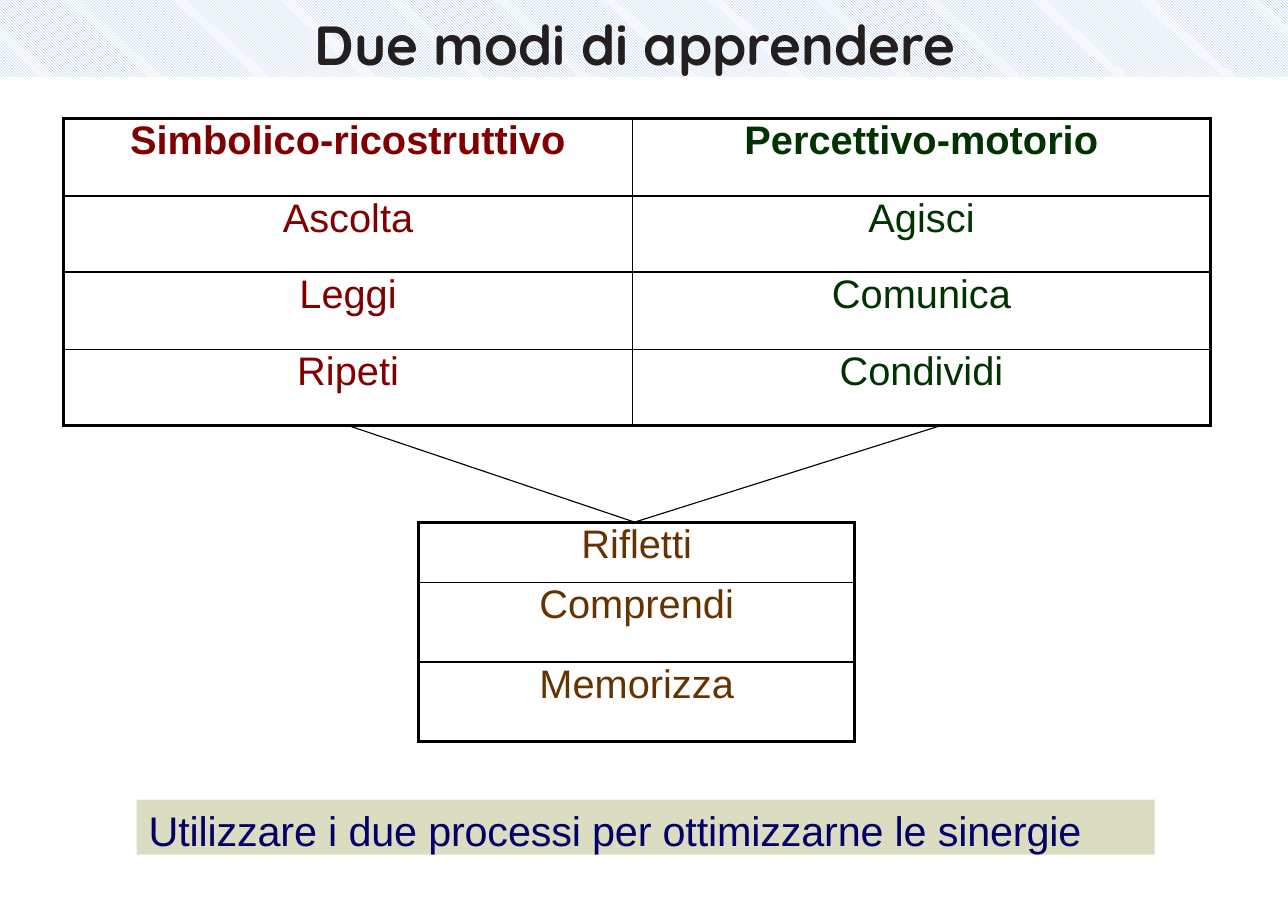
"""Build the slide on two ways of learning."""
from lxml.etree import SubElement
from pptx import Presentation
from pptx.dml.color import RGBColor
from pptx.enum.dml import MSO_PATTERN
from pptx.enum.shapes import MSO_CONNECTOR, MSO_SHAPE
from pptx.enum.text import MSO_ANCHOR, PP_ALIGN
from pptx.oxml.ns import qn
from pptx.util import Inches, Pt

HUES = {
    "black": "000000", "white": "FFFFFF", "sky": "8EB4E3", "ink": "231F20",
    "red": "800000", "green": "003300", "brown": "663300",
    "sand": "DCDCC2", "navy": "000066",
}
WAYS = [
    ("Simbolico-ricostruttivo", "Percettivo-motorio"),
    ("Ascolta", "Agisci"),
    ("Leggi", "Comunica"),
    ("Ripeti", "Condividi"),
]
GOALS = [("Rifletti",), ("Comprendi",), ("Memorizza",)]


def hue(name):
    return RGBColor.from_string(HUES[name])


def add_text(frame, text, size, tint, font="Arial", bold=False,
             align=PP_ALIGN.CENTER, before=0, track=0):
    frame.word_wrap = True
    frame.vertical_anchor = MSO_ANCHOR.TOP
    para = frame.paragraphs[0]
    para.alignment = align
    para.space_before = Pt(before)
    run = para.add_run()
    run.text = text
    run.font.size = Pt(size)
    run.font.name = font
    run.font.bold = bold
    run.font.color.rgb = hue(tint)
    if track:
        run.font._element.set("spc", str(track))


def set_pad(item, left=0, top=0):
    item.margin_left, item.margin_top = Inches(left), Inches(top)
    item.margin_right = item.margin_bottom = 0


def add_edge(cell, side, width):
    props = cell._tc.get_or_add_tcPr()
    line = SubElement(props, qn("a:ln" + side), w=str(Pt(width)))
    fill = SubElement(line, qn("a:solidFill"))
    SubElement(fill, qn("a:srgbClr"), val=HUES["black"])


def add_grid(slide, left, top, wides, highs, rows, tints, head=False):
    frame = slide.shapes.add_table(
        len(highs), len(wides), Inches(left), Inches(top),
        Inches(sum(wides)), Inches(sum(highs)))
    table = frame.table
    table.first_row = table.horz_banding = False
    for col, wide in zip(table.columns, wides):
        col.width = Inches(wide)
    for row, high in zip(table.rows, highs):
        row.height = Inches(high)
    for r, words in enumerate(rows):
        for c, word in enumerate(words):
            cell = table.cell(r, c)
            set_pad(cell)
            outer = {"L": c == 0, "R": c == len(wides) - 1,
                     "T": r == 0, "B": r == len(highs) - 1}
            for side, thick in outer.items():
                add_edge(cell, side, 2.25 if thick else 1)
            cell.fill.background()
            add_text(cell.text_frame, word, 26, tints[c],
                     bold=head and r == 0, before=2.5 if r else 1.9)
            cell.vertical_anchor = MSO_ANCHOR.TOP


def add_box(slide, left, top, width, height):
    box = slide.shapes.add_shape(
        MSO_SHAPE.RECTANGLE, Inches(left), Inches(top),
        Inches(width), Inches(height))
    box.shadow.inherit = False
    box.line.fill.background()
    return box


def add_band(slide):
    fill = add_box(slide, 0, 0, 11.69, 0.7).fill
    fill.patterned()
    fill.pattern = MSO_PATTERN.DARK_DOWNWARD_DIAGONAL
    fill.fore_color.rgb = hue("sky")
    fill.back_color.rgb = hue("white")


def add_title(slide, text):
    box = slide.shapes.add_textbox(
        Inches(0.5), Inches(0.09), Inches(10.53), Inches(0.61))
    set_pad(box.text_frame)
    add_text(box.text_frame, text, 36, "ink", "Quicksand", True)


def add_line(slide, start, end):
    line = slide.shapes.add_connector(
        MSO_CONNECTOR.STRAIGHT, *map(Inches, start + end))
    line.line.color.rgb = hue("black")
    line.line.width = Pt(0.75)
    SubElement(line._element.spPr, qn("a:effectLst"))


def add_note(slide, text):
    box = add_box(slide, 1.24, 7.26, 9.24, 0.5)
    box.fill.solid()
    box.fill.fore_color.rgb = hue("sand")
    set_pad(box.text_frame, 0.11, 0.05)
    add_text(box.text_frame, text, 27, "navy", align=PP_ALIGN.LEFT,
             before=3.5, track=-10)


def main():
    deck = Presentation()
    deck.slide_width, deck.slide_height = Inches(11.69), Inches(8.27)
    slide = deck.slides.add_slide(deck.slide_layouts[6])
    add_grid(slide, 0.58, 1.08, [5.16, 5.25], [0.7, 0.69, 0.7, 0.69],
             WAYS, ["red", "green"], head=True)
    add_band(slide)
    add_title(slide, "Due modi di apprendere")
    add_grid(slide, 3.8, 4.74, [3.96], [0.55, 0.72, 0.72],
             GOALS, ["brown"])
    for left in (3.18, 8.52):
        add_line(slide, (left, 3.87), (5.76, 4.74))
    add_note(slide, "Utilizzare i due processi per ottimizzarne le sinergie")
    deck.save("out.pptx")


if __name__ == "__main__":
    main()
